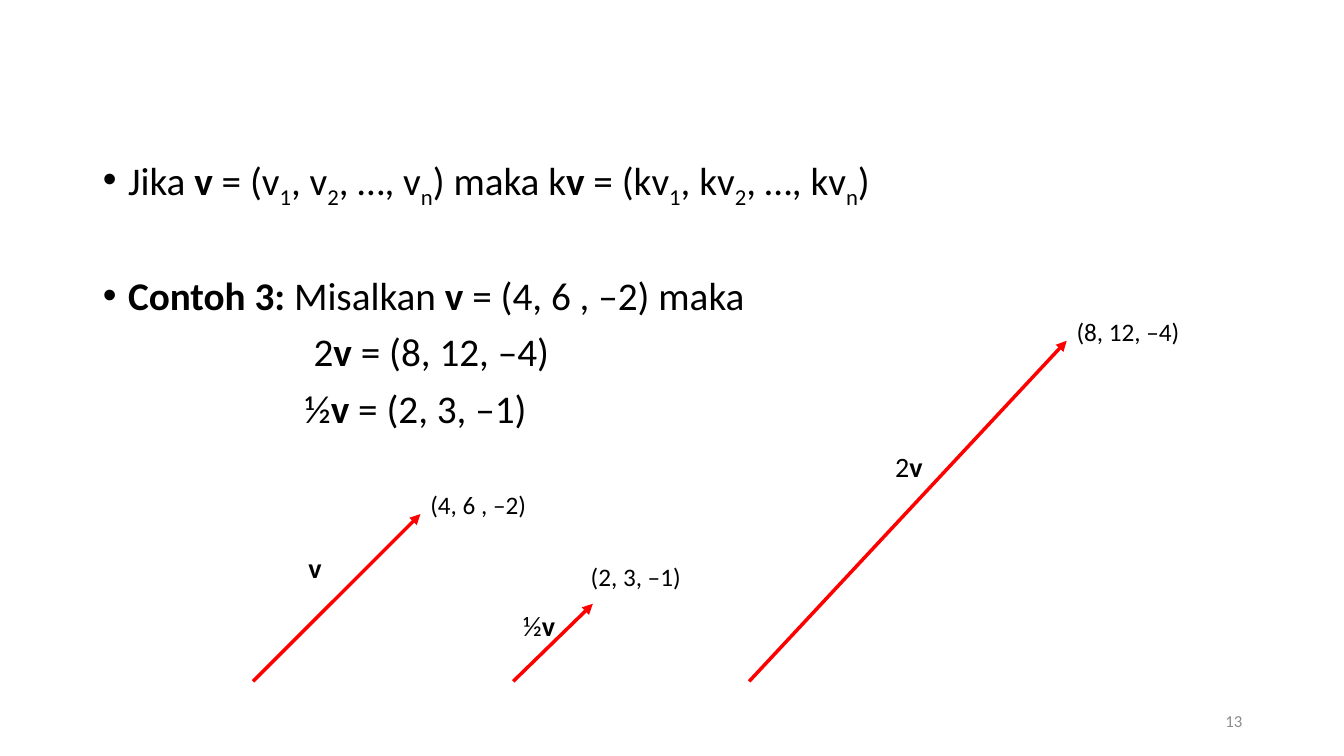
import pptx
import pptx.util
import pptx.dml.color
import pptx.enum.shapes
import pptx.enum.text
import pptx.oxml
import pptx.oxml.ns

Inches = pptx.util.Inches
Pt = pptx.util.Pt
COLORS = {"text": "000000", "vector": "FF0000", "number": "8C8C8C"}


def add_text(paragraph, text, size=20, color="text"):
    """Add runs to a paragraph: *bold* and ~subscript~."""
    for bold_index, part in enumerate(text.split("*")):
        for sub_index, piece in enumerate(part.split("~")):
            if not piece:
                continue
            run = paragraph.add_run()
            run.text = piece
            run.font.name = "Calibri"
            run.font.size = Pt(size)
            run.font.bold = bold_index % 2 == 1
            run.font.color.rgb = pptx.dml.color.RGBColor.from_string(COLORS[color])
            if sub_index % 2:
                run.font._element.set("baseline", "-25000")


def add_child(parent, tag, **attributes):
    child = pptx.oxml.parse_xml(f"<a:{tag} {pptx.oxml.ns.nsdecls('a')}/>")
    for name, value in attributes.items():
        child.set(name, value)
    parent.append(child)


presentation = pptx.Presentation()
presentation.slide_width = Inches(13.33)
presentation.slide_height = Inches(7.5)
slide = presentation.slides.add_slide(presentation.slide_layouts[1])
title = slide.shapes.title
title.element.getparent().remove(title.element)

# Body: definition and worked example
body = slide.placeholders[1]
body.left, body.top = Inches(0.92), Inches(1.51)
body.width, body.height = Inches(11.5), Inches(5.24)
body.text_frame.auto_size = pptx.enum.text.MSO_AUTO_SIZE.NONE
body_lines = [  # text, left margin, bullet, space before
    ("Jika *v *= (v~1~, v~2~, …, v~n~) maka k*v *= (kv~1~, kv~2~, …, kv~n~)", 0.25, True, 10),
    ("*Contoh 3: *Misalkan *v *= (4, 6 , –2) maka", 0.25, True, 50.7),
    ("2*v* = (8, 12, –4)", 2.09, False, 10),
    ("½*v* = (2, 3, –1)", 2, False, 10),
]
for index, (text, margin, bullet, space_before) in enumerate(body_lines):
    paragraph = body.text_frame.paragraphs[0] if index == 0 else body.text_frame.add_paragraph()
    paragraph.line_spacing = 0.9
    paragraph.space_before = Pt(space_before)
    properties = paragraph._p.get_or_add_pPr()
    properties.set("marL", str(Inches(margin)))
    properties.set("indent", str(Inches(-0.25 if bullet else 0)))
    if bullet:
        add_child(properties, "buFont", typeface="Arial")
        add_child(properties, "buChar", char="•")
    else:
        add_child(properties, "buNone")
    add_text(paragraph, text, size=28)

# Vectors, all starting on one baseline
baseline = 6.76
for start_x, end_x, end_y in [(2.51, 4.17, 5.1), (5.09, 5.88, 5.99), (7.43, 10.58, 3.38)]:
    vector = slide.shapes.add_connector(
        pptx.enum.shapes.MSO_CONNECTOR.STRAIGHT,
        Inches(start_x), Inches(baseline), Inches(end_x), Inches(end_y))
    vector.line.color.rgb = pptx.dml.color.RGBColor.from_string(COLORS["vector"])
    vector.line.width = Pt(2.5)
    add_child(vector.line._get_or_add_ln(), "tailEnd", type="triangle")
    add_child(vector.element.spPr, "effectLst")

# Vector names and end points
labels = [  # text, left, top, width, height, size
    ("*v*", 2.96, 5.41, 0.28, 0.44, 20),
    ("(4, 6 , –2)", 4.17, 4.81, 1.22, 0.4, 18),
    ("½*v*", 5.09, 5.99, 0.52, 0.44, 20),
    ("(2, 3, –1)", 5.76, 5.52, 1.11, 0.4, 18),
    ("2*v*", 8.78, 4.41, 0.48, 0.44, 20),
    ("(8, 12, –4)", 10.58, 3.09, 1.24, 0.4, 18),
]
for text, left, top, width, height, size in labels:
    label = slide.shapes.add_textbox(Inches(left), Inches(top), Inches(width), Inches(height))
    label.text_frame.word_wrap = False
    add_text(label.text_frame.paragraphs[0], text, size=size)

# Slide number
number = slide.shapes.add_textbox(Inches(9.42), Inches(6.95), Inches(3), Inches(0.4))
number.text_frame.word_wrap = True
number.text_frame.vertical_anchor = pptx.enum.text.MSO_ANCHOR.MIDDLE
number.text_frame.paragraphs[0].alignment = pptx.enum.text.PP_ALIGN.RIGHT
add_text(number.text_frame.paragraphs[0], "13", size=12, color="number")

presentation.save("out.pptx")
